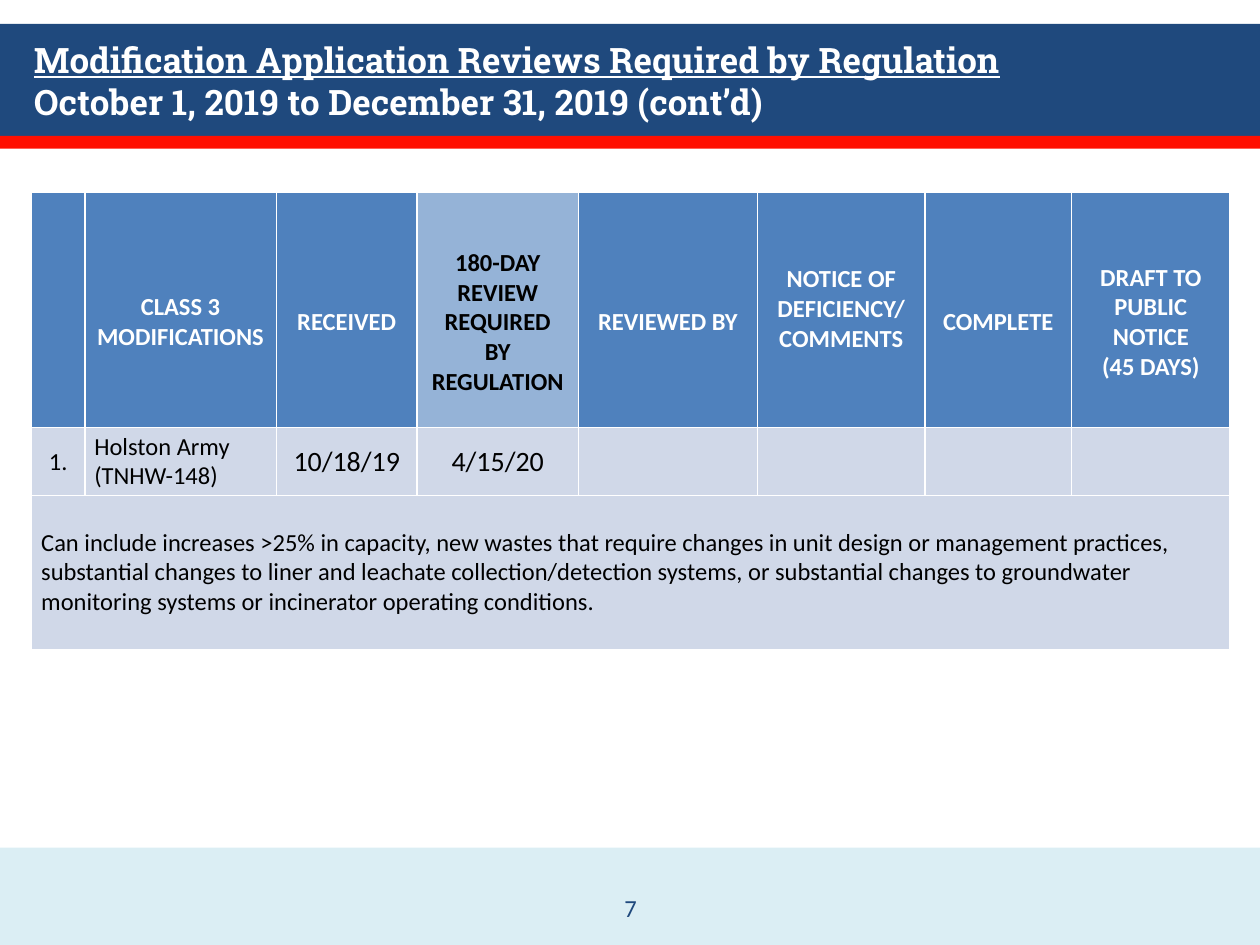
import pptx
import pptx.util
import pptx.dml.color
import pptx.enum.shapes
import pptx.enum.text
import lxml.etree
from pptx.util import Cm, Pt

ANCHOR = pptx.enum.text.MSO_ANCHOR
ALIGN = pptx.enum.text.PP_ALIGN
NAVY, WHITE, BLACK = "1F497D", "FFFFFF", "000000"
BLUE, LIGHT_BLUE, PALE = "4F81BD", "95B3D7", "D0D8E8"


def rgb(value):
    return pptx.dml.color.RGBColor.from_string(value)


def fill_cell(cell, text, background, color, size=14, bold=False, align=ALIGN.CENTER, top_line=1):
    properties = cell._tc.get_or_add_tcPr()
    for side, points in (("L", 1), ("R", 1), ("T", top_line), ("B", 1)):
        line = lxml.etree.SubElement(properties, pptx.oxml.ns.qn(f"a:ln{side}"), w=str(Pt(points)))
        solid = lxml.etree.SubElement(line, pptx.oxml.ns.qn("a:solidFill"))
        lxml.etree.SubElement(solid, pptx.oxml.ns.qn("a:srgbClr"), val=WHITE)
    cell.fill.solid()
    cell.fill.fore_color.rgb = rgb(background)
    cell.vertical_anchor = ANCHOR.MIDDLE
    cell.margin_left = cell.margin_right = Cm(0.19)
    cell.margin_top = cell.margin_bottom = 0
    cell.text = text
    for paragraph in cell.text_frame.paragraphs:
        paragraph.alignment = align
        paragraph.font.name = "Calibri"
        paragraph.font.size = Pt(size)
        paragraph.font.bold = bold
        paragraph.font.color.rgb = rgb(color)


deck = pptx.Presentation()
deck.slide_width, deck.slide_height = Cm(25.4), Cm(19.05)
slide = deck.slides.add_slide(deck.slide_layouts[5])

for top, height, color in ((0.48, 2.26, NAVY), (2.74, 0.26, "FF0F00"), (17.09, 1.96, "DBEEF4")):
    band = slide.shapes.add_shape(
        pptx.enum.shapes.MSO_SHAPE.RECTANGLE, 0, Cm(top), deck.slide_width, Cm(height))
    band.shadow.inherit = False
    band.fill.solid()
    band.fill.fore_color.rgb = rgb(color)
    band.line.fill.background()

title = slide.shapes.title
slide.shapes._spTree.append(title._element)
title.left, title.top, title.width, title.height = Cm(0.43), Cm(0.48), Cm(24.56), Cm(2.29)
title.text_frame.vertical_anchor = ANCHOR.MIDDLE
title.text_frame.word_wrap = True
heading = title.text_frame.paragraphs[0]
heading.alignment = ALIGN.LEFT
heading.font.name = "Roboto Slab"
heading.font.size = Pt(20)
heading.font.bold = True
heading.font.color.rgb = rgb(WHITE)
subject = heading.add_run()
subject.text = "Modification Application Reviews Required by Regulation"
subject.font.underline = True
heading.add_line_break()
heading.add_run().text = "October 1, 2019 to December 31, 2019 (cont’d)"

headers = ["", "CLASS 3 MODIFICATIONS", "RECEIVED", "180-DAY\nREVIEW REQUIRED\nBY REGULATION",
           "REVIEWED BY", "NOTICE OF DEFICIENCY/ COMMENTS", "COMPLETE",
           "DRAFT TO PUBLIC NOTICE\v(45 DAYS)"]
review = ["1.", "Holston Army\n(TNHW-148)", "10/18/19", "4/15/20", "", "", "", ""]
note = ("Can include increases >25% in capacity, new wastes that require changes in unit design "
        "or management practices,\nsubstantial changes to liner and leachate collection/detection "
        "systems, or substantial changes to groundwater monitoring systems or incinerator "
        "operating conditions.")
widths = [1.07, 3.86, 2.84, 3.25, 3.61, 3.38, 2.95, 3.2]
heights = [4.78, 1.37, 3.1]

reviews = slide.shapes.add_table(
    len(heights), len(widths), Cm(0.64), Cm(3.84), Cm(sum(widths)), Cm(sum(heights))).table
for column, width in zip(reviews.columns, widths):
    column.width = Cm(width)
for row, height in zip(reviews.rows, heights):
    row.height = Cm(height)

for index, (header, value) in enumerate(zip(headers, review)):
    deadline = index == 3
    header_cell = reviews.cell(0, index)
    fill_cell(header_cell, header, LIGHT_BLUE if deadline else BLUE,
              BLACK if deadline else WHITE, bold=True, top_line=3)
    if not header.startswith("NOTICE"):
        header_cell.margin_top = Cm(0.54)
    fill_cell(reviews.cell(1, index), value, PALE, BLACK, size=16 if "/" in value else 14,
              align=ALIGN.LEFT if index == 1 else ALIGN.CENTER)

reviews.cell(2, 0).merge(reviews.cell(2, len(widths) - 1))
fill_cell(reviews.cell(2, 0), note, PALE, BLACK, align=ALIGN.LEFT)

page_number = slide.shapes.add_textbox(Cm(8.69), Cm(17.7), Cm(8.05), Cm(1.02)).text_frame
page_number.word_wrap = True
page_number.vertical_anchor = ANCHOR.BOTTOM
page_number.text = "7"
number = page_number.paragraphs[0]
number.alignment = ALIGN.CENTER
number.font.name = "Calibri"
number.font.size = Pt(14)
number.font.color.rgb = rgb(NAVY)

deck.save("out.pptx")
